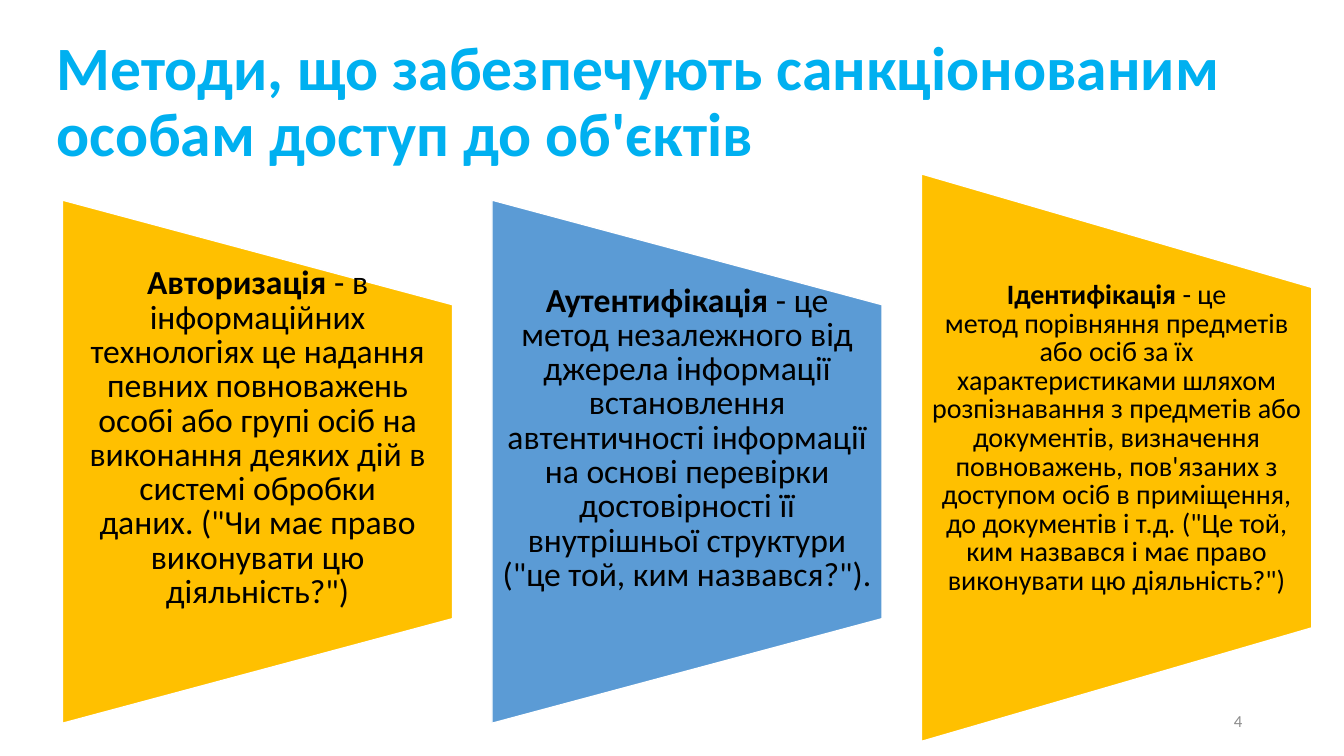
from pptx import Presentation
from pptx.dml.color import RGBColor
from pptx.enum.shapes import MSO_SHAPE
from pptx.enum.text import MSO_ANCHOR, PP_ALIGN
from pptx.util import Inches, Pt

TRAPEZOID = MSO_SHAPE.FLOWCHART_MANUAL_OPERATION
MIDDLE = MSO_ANCHOR.MIDDLE
LEFT, CENTER, RIGHT = PP_ALIGN.LEFT, PP_ALIGN.CENTER, PP_ALIGN.RIGHT
NBSP = chr(160)  # keeps neighbouring words on one line

COLORS = {
    "title": "00B0F0",
    "amber": "FFC000",
    "blue": "5B9BD5",
    "text": "000000",
    "outline": "FFFFFF",
    "number": "8C8C8C",
}

# Term, definition, fill, text size, panel height, panel centre
METHODS = [
    ("Авторизація",
     " - в інформаційних технологіях це надання певних повноважень особі або "
     f"групі осіб на виконання деяких дій в системі обробки даних.{NBSP}"
     "(\"Чи має право виконувати цю діяльність?\")",
     "amber", 24, 5.19, 4.58),
    ("Аутентифікація",
     " - це метод незалежного від джерела інформації встановлення автентичності "
     "інформації на основі перевірки достовірності її внутрішньої структури "
     "(\"це той, ким назвався?\").",
     "blue", 24, 5.19, 4.58),
    ("Ідентифікація",
     f" - це метод{NBSP}порівняння{NBSP}предметів або осіб за їх "
     "характеристиками шляхом розпізнавання з предметів або документів, "
     "визначення повноважень, пов'язаних з доступом осіб в приміщення, "
     f"до документів і т.д.{NBSP}"
     "(\"Це той, ким назвався і має право виконувати цю діяльність?\")",
     "amber", 20, 5.63, 4.54),
]
PANEL_LEFT, PANEL_STEP, PANEL_WIDTH = 0.62, 4.26, 3.87
DEFINITION_TOP, DEFINITION_HEIGHT = 3.66, 1.39


class SlideBuilder:
    """Holds the style and the current slide."""

    font = "Calibri"

    def __init__(self, slide):
        self.slide = slide

    def color(self, name):
        return RGBColor.from_string(COLORS[name])

    def text(self, left, top, width, height, parts, size, color="text",
             align=LEFT, spacing=1.0):
        """Adds a text box; parts are pairs of wording and boldness."""
        box = self.slide.shapes.add_textbox(
            Inches(left), Inches(top), Inches(width), Inches(height))
        frame = box.text_frame
        frame.word_wrap = True
        frame.vertical_anchor = MIDDLE
        paragraph = frame.paragraphs[0]
        paragraph.alignment = align
        paragraph.line_spacing = spacing
        for wording, bold in parts:
            run = paragraph.add_run()
            run.text = wording
            run.font.color.rgb = self.color(color)
            font_format = {"name": self.font, "size": Pt(size), "bold": bold}
            for attribute, value in font_format.items():
                setattr(run.font, attribute, value)

    def panel(self, center_x, center_y, width, height, fill):
        """Adds a trapezoid turned so that its long side faces left."""
        # Before the turn, the visible height runs horizontally
        panel = self.slide.shapes.add_shape(
            TRAPEZOID, Inches(center_x - height / 2),
            Inches(center_y - width / 2), Inches(height), Inches(width))
        panel.rotation = 270
        panel.shadow.inherit = False
        panel.fill.solid()
        panel.fill.fore_color.rgb = self.color(fill)
        panel.line.color.rgb = self.color("outline")
        panel.line.width = Pt(1)


def main():
    presentation = Presentation()
    presentation.slide_width = Inches(13.33)
    presentation.slide_height = Inches(7.5)
    builder = SlideBuilder(
        presentation.slides.add_slide(presentation.slide_layouts[6]))

    # Title
    builder.text(0.46, 0.33, 11.98, 1.39,
                 [("Методи, що забезпечують санкціонованим особам доступ "
                   "до об'єктів", True)],
                 44, "title", spacing=0.9)

    # Access methods
    for index, method in enumerate(METHODS):
        term, definition, fill, size, height, center_y = method
        left = PANEL_LEFT + index * PANEL_STEP
        builder.panel(left + PANEL_WIDTH / 2, center_y, PANEL_WIDTH, height, fill)
        builder.text(left, DEFINITION_TOP, PANEL_WIDTH, DEFINITION_HEIGHT,
                     [(term, True), (definition, False)], size,
                     align=CENTER, spacing=0.85)

    # Slide number
    builder.text(9.42, 6.95, 3, 0.4, [("4", False)], 12, "number", RIGHT)

    presentation.save("out.pptx")


if __name__ == "__main__":
    main()
